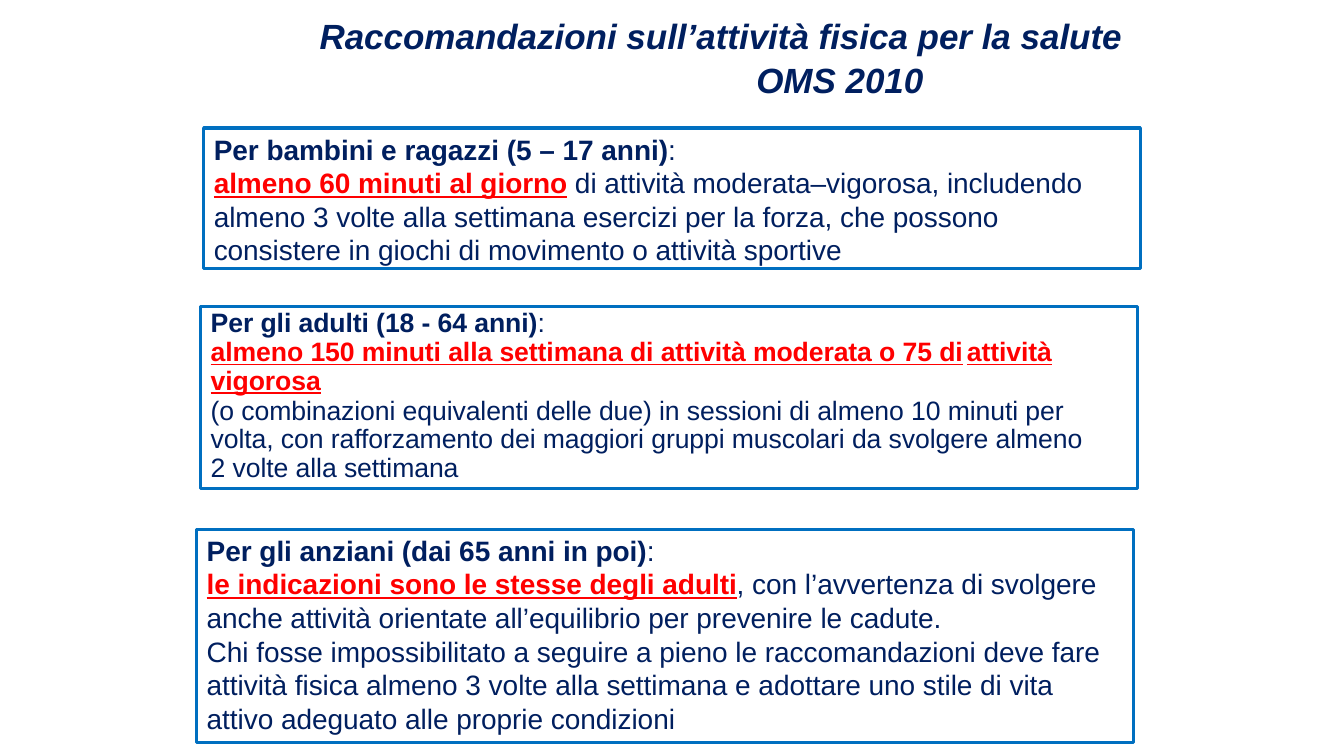
from pptx import Presentation
from pptx.dml.color import RGBColor
from pptx.enum.shapes import MSO_SHAPE
from pptx.enum.text import MSO_ANCHOR, PP_ALIGN
from pptx.oxml.ns import qn
from pptx.util import Inches, Pt
from lxml.etree import SubElement

NAVY = RGBColor(0x00, 0x1F, 0x5F)
RED = RGBColor(0xFF, 0x00, 0x00)
BLUE = RGBColor(0x00, 0x6F, 0xC0)

STYLES = {
    "title": ({"bold": True, "italic": True}, NAVY, 0),
    "head": ({"bold": True}, NAVY, -5),
    "key": ({"bold": True, "underline": True}, RED, -5),
    "body": ({"bold": False}, NAVY, -5),
}

CHILDREN = [
    ([("head", "Per bambini e ragazzi (5 – 17 anni)"), ("body", ":")], {}),
    ([("key", "almeno 60 minuti al giorno"),
      ("body", " di attività moderata–vigorosa, includendo almeno 3 volte alla "
               "settimana esercizi per la forza, che possono consistere in giochi "
               "di movimento o attività sportive")], {}),
]
ADULTS = [
    ([("head", "Per gli adulti (18 - 64 anni)"), ("body", ":")],
     {"line_spacing": Pt(21.8)}),
    ([("key", "almeno 150 minuti alla settimana di attività moderata o 75 di"),
      ("body", "\t"), ("key", "attività")], {"line_spacing": Pt(20.6)}),
    ([("key", "vigorosa")], {"line_spacing": Pt(20.5)}),
    ([("body", "(o combinazioni equivalenti delle due) in sessioni di almeno 10 "
               "minuti per volta, con rafforzamento dei maggiori gruppi muscolari "
               "da svolgere almeno 2 volte alla settimana")],
     {"line_spacing": 0.9, "space_before": Pt(1.2)}),
]
ELDERLY = [
    ([("head", "Per gli anziani (dai 65 anni in poi)"), ("body", ":")], {}),
    ([("key", "le indicazioni sono le stesse degli adulti"),
      ("body", ", con l’avvertenza di svolgere anche attività orientate "
               "all’equilibrio per prevenire le cadute.")], {}),
    ([("body", "Chi fosse impossibilitato a seguire a pieno le raccomandazioni "
               "deve fare attività fisica almeno 3 volte alla settimana e adottare "
               "uno stile di vita attivo adeguato alle proprie condizioni")], {}),
]
TITLE = [
    ([("title", "Raccomandazioni sull’attività fisica per la salute")], {}),
    ([("title", "OMS 2010")],
     {"alignment": PP_ALIGN.CENTER, "space_before": Pt(1.5)}),
]


def set_all(obj, values):
    for name, value in values.items():
        setattr(obj, name, value)


def set_indent(p, left, right=0):
    pPr = p._p.get_or_add_pPr()
    pPr.set("marL", str(Inches(left)))
    pPr.set("marR", str(Inches(right)))
    pPr.set("indent", "0")


def add_tab(p, pos):
    tabs = SubElement(p._p.get_or_add_pPr(), qn("a:tabLst"))
    SubElement(tabs, qn("a:tab"), pos=str(Inches(pos)), algn="l")


def write_text(tf, paragraphs, size, top):
    set_all(tf, {"word_wrap": True, "vertical_anchor": MSO_ANCHOR.TOP,
                 "margin_left": 0, "margin_right": 0,
                 "margin_top": Inches(top), "margin_bottom": 0})
    for i, (runs, layout) in enumerate(paragraphs):
        p = tf.add_paragraph() if i else tf.paragraphs[0]
        set_all(p, {"alignment": PP_ALIGN.LEFT, **layout})
        for style, text in runs:
            r = p.add_run()
            r.text = text
            values, color, spacing = STYLES[style]
            set_all(r.font, {"name": "Arial", "size": Pt(size), **values})
            r.font.color.rgb = color
            r._r.get_or_add_rPr().set("spc", str(spacing))


def add_title(s, left, top, width, height):
    sp = s.shapes.add_textbox(Inches(left), Inches(top), Inches(width), Inches(height))
    write_text(sp.text_frame, TITLE, 25, 0.01)
    set_indent(sp.text_frame.paragraphs[0], 0.51)


def add_advice(s, box, paragraphs, size, top, right):
    sp = s.shapes.add_shape(MSO_SHAPE.RECTANGLE, *map(Inches, box))
    sp.shadow.inherit = False
    sp.fill.background()
    sp.line.color.rgb = BLUE
    sp.line.width = Pt(2.25)
    write_text(sp.text_frame, paragraphs, size, top)
    for p in sp.text_frame.paragraphs:
        if "\t" in p.text:
            set_indent(p, 0.1)
            add_tab(p, 7.79)
        else:
            set_indent(p, 0.1, right)


def main():
    prs = Presentation()
    prs.slide_width, prs.slide_height = Inches(13.33), Inches(7.5)
    s = prs.slides.add_slide(prs.slide_layouts[6])
    add_title(s, 2.66, 0.13, 11.34, 0.88)
    add_advice(s, (2.02, 1.27, 9.29, 1.39), CHILDREN, 20, 0.04, 0.25)
    add_advice(s, (1.99, 3.04, 9.29, 1.81), ADULTS, 19, 0.01, 0.4)
    add_advice(s, (1.95, 5.25, 9.29, 2.12), ELDERLY, 20, 0.04, 0.25)
    prs.save("out.pptx")


if __name__ == "__main__":
    main()
